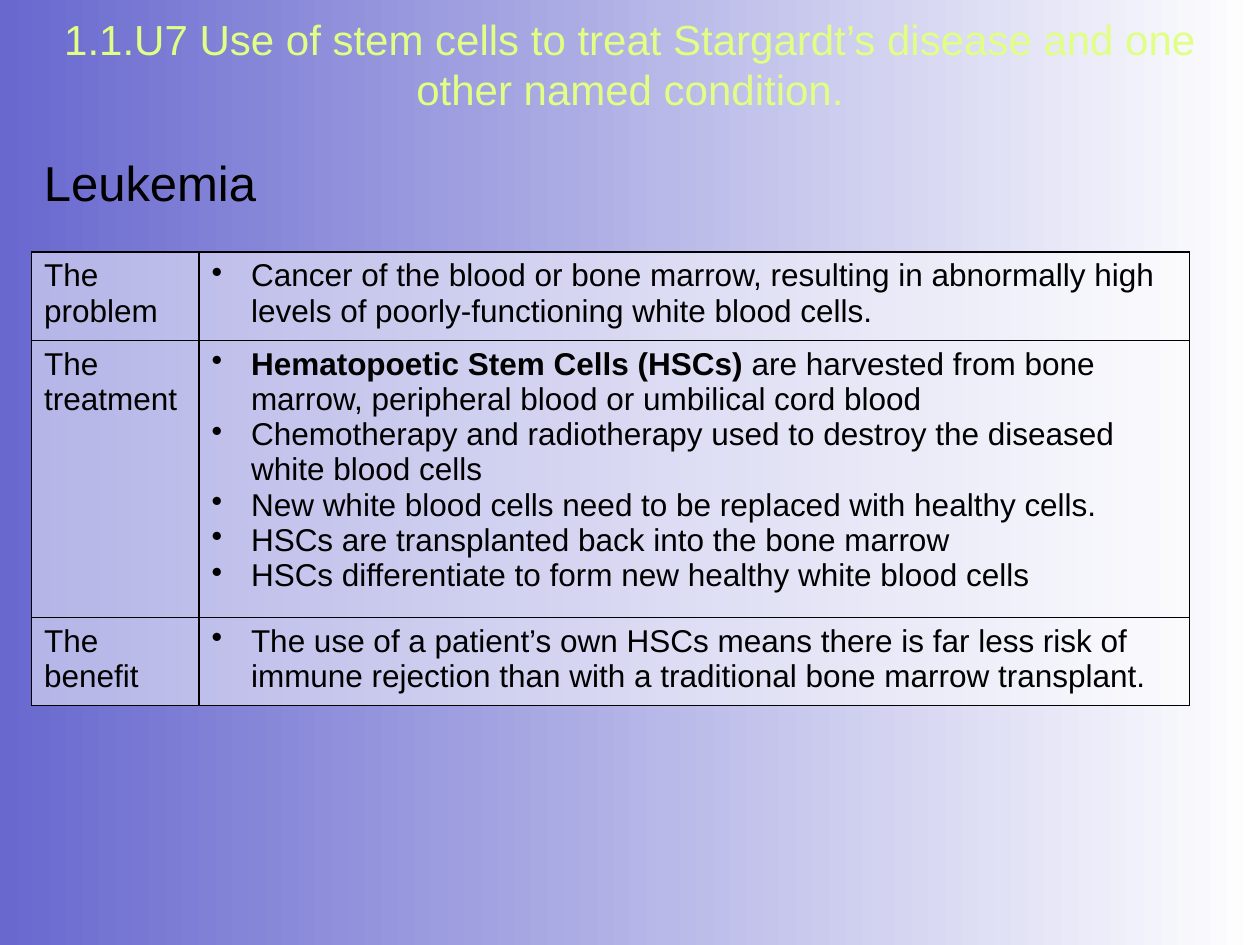
import pptx
import pptx.dml.color
import pptx.enum.text
import pptx.oxml
import pptx.oxml.ns
import pptx.util

Pt = pptx.util.Pt
RGB = pptx.dml.color.RGBColor.from_string
ALIGN = pptx.enum.text.PP_ALIGN
ANCHOR = pptx.enum.text.MSO_ANCHOR
NS = pptx.oxml.ns.nsdecls("a")

COLOURS = {"violet": "6868CF", "white": "FFFFFF", "lime": "E0FF84", "black": "000000"}
ROWS = [
    ("The problem", 47.5, [
        "Cancer of the blood or bone marrow, resulting in abnormally high levels "
        "of poorly-functioning white blood cells."]),
    ("The treatment", 148.5, [
        ("Hematopoetic Stem Cells (HSCs) ",
         "are harvested from bone marrow, peripheral blood or umbilical cord blood"),
        "Chemotherapy and radiotherapy used to destroy the diseased white blood cells",
        "New white blood cells need to be replaced with healthy cells.",
        "HSCs are transplanted back into the bone marrow",
        "HSCs differentiate to form new healthy white blood cells"]),
    ("The benefit", 47.5, [
        "The use of a patient’s own HSCs means there is far less risk of immune "
        "rejection than with a traditional bone marrow transplant."]),
]


class Deck:
    def __init__(self, width, height):
        self.file = pptx.Presentation()
        self.file.slide_width, self.file.slide_height = Pt(width), Pt(height)
        self.slide = self.file.slides.add_slide(self.file.slide_layouts[6])
        self.font = "Arial"

    def backdrop(self, *names):
        fill = self.slide.background.fill
        fill.gradient()
        fill.gradient_angle = 0
        for stop, name, place in zip(fill.gradient_stops, names, (0, 1)):
            stop.color.rgb = RGB(COLOURS[name])
            stop.position = place

    def run(self, para, text, size, colour="black", bold=False):
        run = para.add_run()
        run.text = text
        style = {"name": self.font, "size": Pt(size), "bold": bold}
        for key, value in style.items():
            setattr(run.font, key, value)
        run.font.color.rgb = RGB(COLOURS[colour])

    def text(self, box, words, size, colour="black", align=ALIGN.LEFT, anchor=ANCHOR.TOP):
        frame = self.slide.shapes.add_textbox(*map(Pt, box)).text_frame
        for key, value in {"word_wrap": True, "vertical_anchor": anchor}.items():
            setattr(frame, key, value)
        para = frame.paragraphs[0]
        para.alignment = align
        self.run(para, words, size, colour)

    def bullet(self, para):
        props = para._p.get_or_add_pPr()
        props.set("marL", str(Pt(22.5)))
        props.set("indent", str(-Pt(22.5)))
        props.append(pptx.oxml.parse_xml(
            f'<a:buClr {NS}><a:srgbClr val="{COLOURS["black"]}"/></a:buClr>'))
        props.append(pptx.oxml.parse_xml(f'<a:buChar {NS} char="•"/>'))

    def paint(self, cell):
        """Give the cell a half-transparent white fill and thin black borders."""
        cell.fill.solid()
        cell.fill.fore_color.rgb = RGB(COLOURS["white"])
        props = cell._tc.get_or_add_tcPr()
        tint = props.find(".//" + pptx.oxml.ns.qn("a:srgbClr"))
        tint.append(pptx.oxml.parse_xml(f'<a:alpha {NS} val="50000"/>'))
        for spot, side in enumerate("LRTB"):
            props.insert(spot, pptx.oxml.parse_xml(
                f'<a:ln{side} {NS} w="{Pt(1)}"><a:solidFill>'
                f'<a:srgbClr val="{COLOURS["black"]}"/></a:solidFill></a:ln{side}>'))

    def table(self, left, top, widths, rows, size):
        height = sum(row[1] for row in rows)
        table = self.slide.shapes.add_table(
            len(rows), len(widths), *map(Pt, (left, top, sum(widths), height))).table
        table.first_row = table.horz_banding = False
        for column, width in zip(table.columns, widths):
            column.width = Pt(width)
        for row, (label, height, points) in zip(table.rows, rows):
            row.height = Pt(height)
            head, body = row.cells
            self.run(head.text_frame.paragraphs[0], label, size)
            self.points(body.text_frame, points, size)
            for cell in (head, body):
                self.paint(cell)

    def points(self, frame, points, size):
        """Fill in bulleted paragraphs; a pair has a bold lead and a plain rest."""
        for index, point in enumerate(points):
            para = frame.add_paragraph() if index else frame.paragraphs[0]
            self.bullet(para)
            lead, rest = point if isinstance(point, tuple) else ("", point)
            if lead:
                self.run(para, lead, size, bold=True)
            self.run(para, rest, size)


def main():
    deck = Deck(720, 540)
    deck.backdrop("violet", "white")
    deck.text((0, 0.72, 720, 71.28),
              "1.1.U7 Use of stem cells to treat Stargardt’s disease "
              "and one other named condition.",
              24, "lime", ALIGN.CENTER, ANCHOR.MIDDLE)
    deck.text((18, 83.5, 144, 54.7), "Leukemia", 28)
    deck.table(18, 144, (95.76, 565.92), ROWS, 18)
    deck.file.save("out.pptx")


if __name__ == "__main__":
    main()
